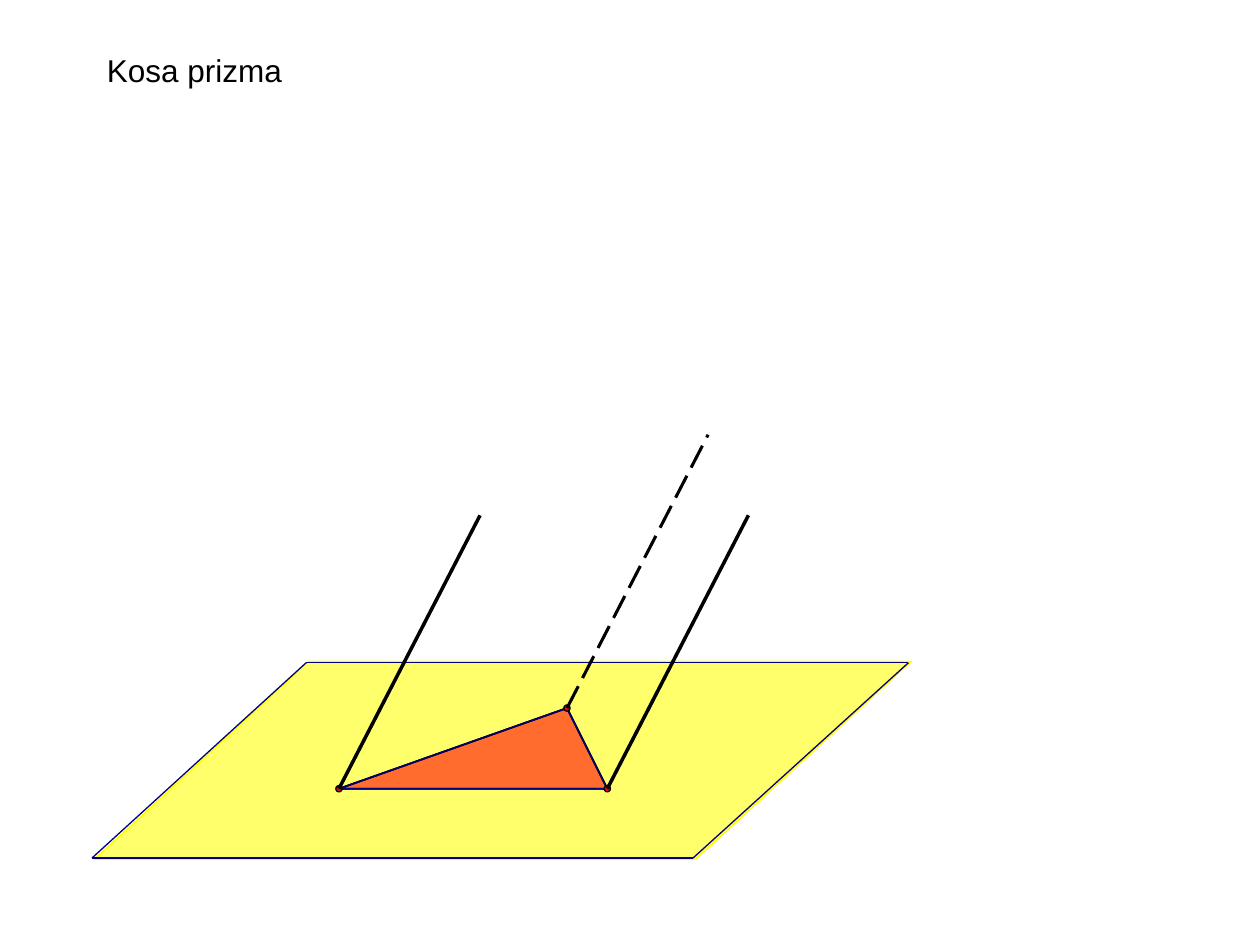
from itertools import pairwise

from lxml import etree
from pptx import Presentation
from pptx.dml.color import RGBColor
from pptx.enum.dml import MSO_LINE
from pptx.enum.shapes import MSO_CONNECTOR, MSO_SHAPE
from pptx.oxml.ns import qn
from pptx.util import Inches, Pt

STRAIGHT = MSO_CONNECTOR.STRAIGHT
OVAL = MSO_SHAPE.OVAL
LONG_DASH = MSO_LINE.LONG_DASH

BLACK, NAVY, RED, YELLOW = "000000", "000080", "FF0000", "FFFF00"
OPACITY = 35
LAYERS = 2
PLANE = [(0.75, 6.82), (5.52, 6.82), (7.23, 5.25), (2.45, 5.25)]
PLANE_EDGE = [(0.73, 6.81), (5.5, 6.81), (7.21, 5.26), (2.43, 5.26)]
BASE = [(2.69, 6.26), (4.82, 6.26), (4.5, 5.62)]
SIDE_EDGE = (1.12, -2.17)
DOT = 0.05


def rgb(color):
    return RGBColor.from_string(color)


class Drawing:
    """Holds the slide and the text style."""

    font = "Arial"
    size = 18

    def __init__(self, slide):
        self.slide = slide
        self.shapes = slide.shapes

    def style(self, sp, fill, line, width):
        sp.shadow.inherit = False
        sp.fill.solid()
        sp.fill.fore_color.rgb = rgb(fill)
        sp.line.color.rgb = rgb(line)
        sp.line.width = Pt(width)

    def polygon(self, points, fill, line, width):
        """Draw a closed, see-through outline."""
        corners = [(Inches(x), Inches(y)) for x, y in points]
        builder = self.shapes.build_freeform(*corners[0], scale=1.0)
        builder.add_line_segments(corners[1:], close=True)
        sp = builder.convert_to_shape()
        self.style(sp, fill, line, width)
        color = sp.fill._xPr.find(qn("a:solidFill"))[0]
        etree.SubElement(color, qn("a:alpha"), val=str(OPACITY * 1000))

    def line(self, start, end, color, width, dash=None):
        ends = [Inches(v) for v in (*start, *end)]
        cxn = self.shapes.add_connector(STRAIGHT, *ends)
        cxn.line.color.rgb = rgb(color)
        cxn.line.width = Pt(width)
        if dash is not None:
            cxn.line.dash_style = dash
        etree.SubElement(cxn._element.spPr, qn("a:effectLst"))

    def edges(self, points):
        for start, end in pairwise(points + points[:1]):
            self.line(start, end, NAVY, 0.75)

    def side_edge(self, vertex, width, dash=None):
        """Draw a slanted prism edge rising from a vertex of the base."""
        top = [v + d for v, d in zip(vertex, SIDE_EDGE)]
        self.line(vertex, top, BLACK, width, dash)

    def dot(self, center):
        x, y = center
        sp = self.shapes.add_shape(OVAL, Inches(x - DOT / 2), Inches(y - DOT / 2),
                                   Inches(DOT), Inches(DOT))
        self.style(sp, RED, BLACK, 0)

    def text(self, words, left, top, width, height):
        box = self.shapes.add_textbox(Inches(left), Inches(top),
                                      Inches(width), Inches(height))
        tf = box.text_frame
        tf.word_wrap = True
        r = tf.paragraphs[0].add_run()
        r.text = words
        r.font.name = self.font
        r.font.size = Pt(self.size)
        r.font.color.rgb = rgb(BLACK)


def main():
    prs = Presentation()
    prs.slide_width, prs.slide_height = Inches(10), Inches(7.5)
    drawing = Drawing(prs.slides.add_slide(prs.slide_layouts[6]))

    for _ in range(LAYERS):
        drawing.polygon(PLANE, YELLOW, YELLOW, 0)
    drawing.edges(PLANE_EDGE)

    left, right, back = BASE
    for _ in range(LAYERS):
        drawing.polygon(BASE, RED, BLACK, 1)
    drawing.edges(BASE)
    for vertex in BASE:
        drawing.dot(vertex)

    drawing.side_edge(left, 2)
    drawing.side_edge(right, 2)
    drawing.side_edge(back, 1.75, LONG_DASH)

    drawing.text("Kosa prizma", 0.75, 0.36, 4.02, 0.4)
    prs.save("out.pptx")


if __name__ == "__main__":
    main()
